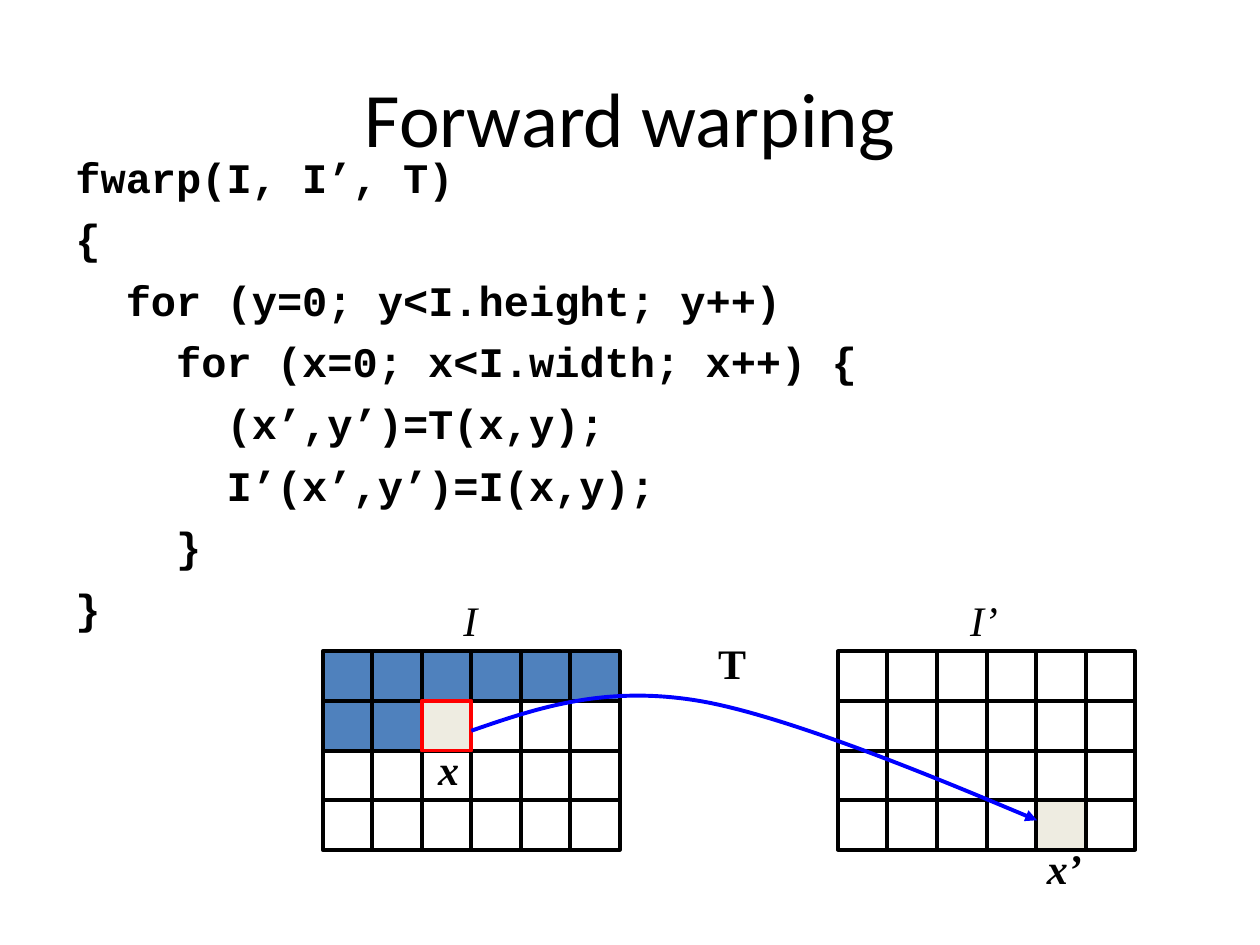
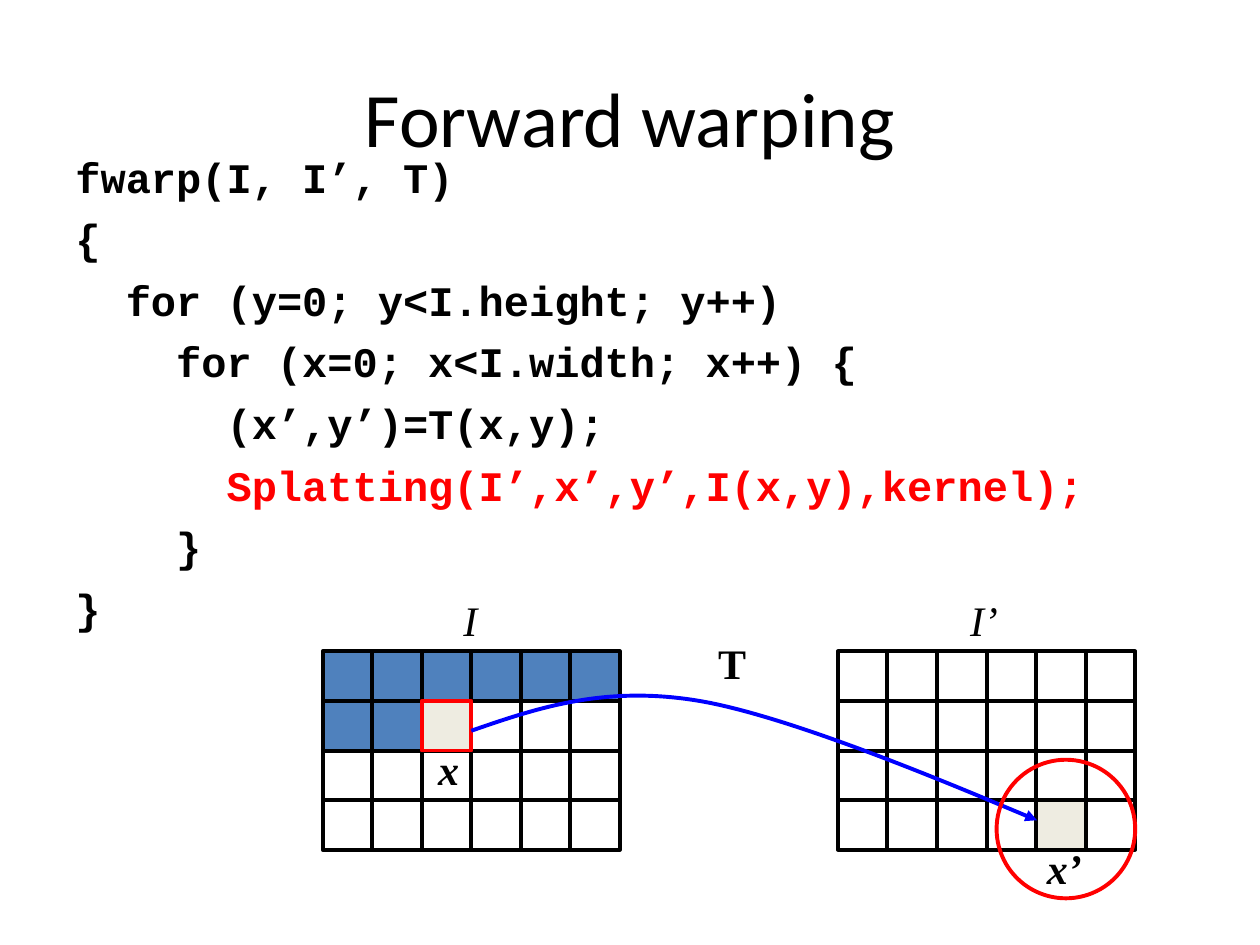
from pptx import Presentation
from pptx.dml.color import RGBColor
from pptx.enum.shapes import MSO_SHAPE
from pptx.enum.text import MSO_ANCHOR, MSO_AUTO_SIZE, PP_ALIGN
from pptx.oxml.ns import qn
from pptx.oxml.xmlchemy import OxmlElement
from pptx.util import Inches, Pt

BLACK = RGBColor(0x00, 0x00, 0x00)
RED = RGBColor(0xFF, 0x00, 0x00)
BLUE = RGBColor(0x00, 0x00, 0xFF)
DONE = RGBColor(0x4F, 0x81, 0xBD)
PIXEL = RGBColor(0xEE, 0xEC, 0xE1)

RECT, OVAL = MSO_SHAPE.RECTANGLE, MSO_SHAPE.OVAL
MIDDLE, CENTER = MSO_ANCHOR.MIDDLE, PP_ALIGN.CENTER
GROW = MSO_AUTO_SIZE.SHAPE_TO_FIT_TEXT

TITLE, CODE, MATH = "Calibri", "Courier New", "Times New Roman"
STROKE = Pt(2.25)
ROWS, COLS = 4, 6
CELL = Inches(2.36) // COLS
TAB = Inches(0.4)

HEAD = [
    (0, "fwarp(I, I’, T)", BLACK),
    (0, "{", BLACK),
    (1, "for (y=0; y<I.height; y++)", BLACK),
    (2, "for (x=0; x<I.width; x++) {", BLACK),
    (3, "(x’,y’)=T(x,y);", BLACK),
]
COPY = (3, "I’(x’,y’)=I(x,y);", BLACK)
SPLAT = (3, "Splatting(I’,x’,y’,I(x,y),kernel);", RED)
TAIL = [(2, "}", BLACK), (0, "}", BLACK)]


def add_run(para, text, font, size, color=BLACK, bold=False, italic=False):
    run = para.add_run()
    run.text = text
    run.font.name = font
    run.font.size = Pt(size)
    run.font.color.rgb = color
    run.font.bold = bold
    run.font.italic = italic


def add_title(slide, text, left, top, width, height):
    title = slide.shapes.title
    title.left, title.top, title.width, title.height = left, top, width, height
    title.text_frame.vertical_anchor = MIDDLE
    para = title.text_frame.paragraphs[0]
    para.alignment = CENTER
    add_run(para, text, TITLE, 44)


def add_code(slide, lines, left, top, width, height):
    frame = slide.shapes.add_textbox(left, top, width, height).text_frame
    frame.word_wrap = True
    for row, (level, text, color) in enumerate(lines):
        para = frame.add_paragraph() if row else frame.paragraphs[0]
        para.space_before = Pt(6.4)
        para._p.get_or_add_pPr().set("marL", str(level * TAB))
        add_run(para, text, CODE, 24, color, bold=True)


def add_mark(slide, text, left, top, width, bold=True, italic=True):
    box = slide.shapes.add_textbox(left, top, width, Inches(0.5))
    frame = box.text_frame
    frame.word_wrap = False
    frame.auto_size = GROW
    add_run(frame.paragraphs[0], text, MATH, 24, bold=bold, italic=italic)


def set_style(shape, line, fill=None):
    shape.shadow.inherit = False
    shape.line.color.rgb = line
    shape.line.width = STROKE
    if fill is None:
        shape.fill.background()
    else:
        shape.fill.solid()
        shape.fill.fore_color.rgb = fill


def add_cell(slide, left, top, row, col, line=BLACK, fill=None):
    cell = slide.shapes.add_shape(
        RECT, left + col * CELL, top + row * CELL, CELL, CELL)
    set_style(cell, line, fill)


def add_grid(slide, left, top, fills):
    for row in range(ROWS):
        for col in range(COLS):
            add_cell(slide, left, top, row, col, fill=fills.get((row, col)))


def add_curve(slide, left, top, points):
    spots = [(left + Inches(x), top + Inches(y)) for x, y in points]
    maker = slide.shapes.build_freeform(*spots[0])
    maker.add_line_segments(spots[1:], close=False)
    curve = maker.convert_to_shape()
    set_style(curve, BLUE)
    steps = list(curve.element.iter(qn("a:lnTo")))
    for first in range(0, len(steps), 3):
        bezier = OxmlElement("a:cubicBezTo")
        steps[first].addprevious(bezier)
        for step in steps[first:first + 3]:
            bezier.append(step[0])
            step.getparent().remove(step)
    tip = OxmlElement("a:tailEnd")
    tip.set("type", "triangle")
    curve.element.spPr.find(qn("a:ln")).append(tip)


def add_warp(slide, left, top, ring):
    grid = top + Inches(0.5)
    right = left + Inches(4.09)
    fills = {(0, col): DONE for col in range(COLS)}
    fills.update({(1, 0): DONE, (1, 1): DONE})
    add_grid(slide, left, grid, fills)
    add_grid(slide, right, grid, {(3, 4): PIXEL})
    add_cell(slide, left, grid, 1, 2, RED, PIXEL)

    add_mark(slide, "I", left + Inches(1.02), top, Inches(0.31), bold=False)
    add_mark(slide, "I’", right + Inches(0.95), top, Inches(0.42), bold=False)
    add_mark(slide, "x", left + Inches(0.82), top + Inches(1.18), Inches(0.37))
    add_mark(slide, "x’", right + Inches(1.56), top + Inches(1.97), Inches(0.48))
    add_curve(slide, left, top, [
        (1.18, 1.13), (1.7, 0.95), (2.23, 0.77), (2.97, 0.89),
        (3.72, 1.01), (5.26, 1.67), (5.67, 1.84)])
    add_mark(slide, "T", left + Inches(3.04), top + Inches(0.34),
             Inches(0.42), italic=False)
    if ring:
        circle = slide.shapes.add_shape(
            OVAL, right + Inches(1.26), top + Inches(1.36),
            Inches(1.1), Inches(1.1))
        set_style(circle, RED)


def add_page(deck, step, ring):
    slide = deck.slides.add_slide(deck.slide_layouts[5])
    left, width = Inches(0.5), Inches(9)
    add_title(slide, "Forward warping", left, Inches(0.3), width, Inches(1.25))
    add_code(slide, HEAD + [step] + TAIL, left, Inches(1.15), width, Inches(3.94))
    add_warp(slide, Inches(2.56), Inches(4.67), ring)


def main():
    deck = Presentation()
    deck.slide_width, deck.slide_height = Inches(10), Inches(7.5)
    add_page(deck, COPY, ring=False)
    add_page(deck, SPLAT, ring=True)
    deck.save("out.pptx")


if __name__ == "__main__":
    main()
